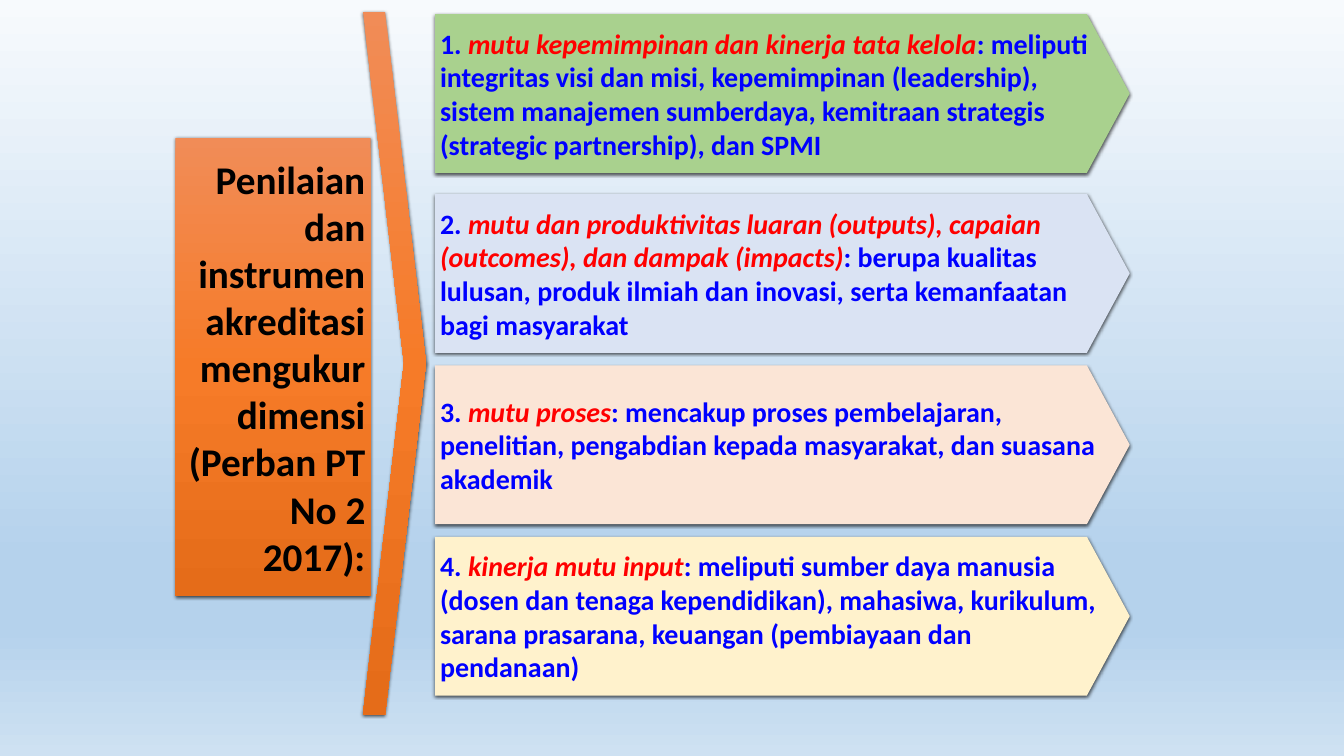
"""Build a slide on the four dimensions that accreditation measures."""
from typing import NamedTuple

from lxml.etree import SubElement
from pptx import Presentation
from pptx.dml.color import RGBColor
from pptx.enum.shapes import MSO_SHAPE as Kind
from pptx.enum.text import MSO_ANCHOR as Anchor, MSO_AUTO_SIZE as Auto, PP_ALIGN as Align
from pptx.oxml.ns import qn
from pptx.util import Pt

PX = 9144
FONT = "Calibri"
BLUE, RED, BLACK = "0000FF", "FF0000", "000000"
SKY = [(0, "F7FAFD"), (74, "B5D2EC"), (83, "B5D2EC"), (100, "CEE1F2")]
FLAME = [(0, "F18C57"), (50, "F67B28"), (100, "E56C19")]


class Box(NamedTuple):
    """A place on the slide in px."""
    x: int
    y: int
    w: int
    h: int


class Point(NamedTuple):
    """One measured dimension with its arrow."""
    top: int
    fill: str
    name: str
    rest: str


POINTS = [
    Point(28, "A9D18E", "mutu kepemimpinan dan kinerja tata kelola",
          "meliputi integritas visi dan misi, kepemimpinan (leadership), sistem manajemen "
          "sumberdaya, kemitraan strategis (strategic partnership), dan SPMI"),
    Point(385, "DAE3F3",
          "mutu dan produktivitas luaran (outputs), capaian (outcomes), dan dampak (impacts)",
          "berupa kualitas lulusan, produk ilmiah dan inovasi, serta kemanfaatan bagi masyarakat"),
    Point(725, "FBE5D6", "mutu proses",
          "mencakup proses pembelajaran, penelitian, pengabdian kepada masyarakat, "
          "dan suasana akademik"),
    Point(1065, "FFF2CC", "kinerja mutu input",
          "meliputi sumber daya manusia (dosen dan tenaga kependidikan), mahasiwa, kurikulum, "
          "sarana prasarana, keuangan (pembiayaan dan pendanaan)"),
]


def tint(code: str) -> RGBColor:
    """Turn a hex string into a colour."""
    return RGBColor.from_string(code)


def blend(fill, root, stops: list) -> None:
    """Give a fill a gradient that runs from top to bottom."""
    fill.gradient()
    fill.gradient_angle = 270
    band = next(root.iter(qn("a:gsLst")))
    band.clear()
    for pos, code in stops:
        stop = SubElement(band, qn("a:gs"), pos=str(pos * 1000))
        SubElement(stop, qn("a:srgbClr"), val=code)


def shade(shape) -> None:
    """Drop the outline and cast a soft shadow downwards."""
    shape.line.fill.background()
    shape.shadow.inherit = False
    effect = next(shape._element.iter(qn("a:effectLst")))
    cast = SubElement(effect, qn("a:outerShdw"), blurRad=str(Pt(4.5)), dist=str(Pt(1.5)),
                      dir="5400000", algn="ctr", rotWithShape="0")
    ink = SubElement(cast, qn("a:srgbClr"), val=BLACK)
    SubElement(ink, qn("a:alpha"), val="63000")


def style(run, size: int, code: str, slant: bool = False) -> None:
    """Format one bold run."""
    font = run.font
    font.name, font.size, font.bold, font.italic = FONT, Pt(size), True, slant
    font.color.rgb = tint(code)


def place(slide, kind: Kind, box: Box, adj: float):
    """Add a shadowed preset shape."""
    shape = slide.shapes.add_shape(kind, *(n * PX for n in box))
    shape.adjustments[0] = adj
    shade(shape)
    return shape


def head(slide, box: Box, text: str) -> None:
    """Turn the title into the orange label."""
    title = slide.shapes.title
    title.left, title.top, title.width, title.height = (n * PX for n in box)
    blend(title.fill, title._element, FLAME)
    shade(title)
    frame = title.text_frame
    frame.text = text
    frame.word_wrap, frame.auto_size = True, Auto.NONE
    frame.vertical_anchor = Anchor.MIDDLE
    para = frame.paragraphs[0]
    para.alignment = Align.RIGHT
    style(para.runs[0], 56, BLACK)


def arrow(slide, num: int, point: Point) -> None:
    """Draw one numbered dimension."""
    shape = place(slide, Kind.PENTAGON, Box(863, point.top, 1378, 315), 0.27)
    shape.fill.solid()
    shape.fill.fore_color.rgb = tint(point.fill)
    frame = shape.text_frame
    frame.word_wrap, frame.vertical_anchor = True, Anchor.MIDDLE
    para = frame.paragraphs[0]
    para.alignment = Align.LEFT
    for text, code in ((f"{num}. ", BLUE), (point.name, RED), (f": {point.rest}", BLUE)):
        run = para.add_run()
        run.text = text
        style(run, 40, code, code == RED)


def main() -> None:
    """Build and save the slide."""
    deck = Presentation()
    deck.slide_width, deck.slide_height = 2666 * PX, 1500 * PX
    slide = deck.slides.add_slide(deck.slide_layouts[5])
    blend(slide.background.fill, slide._element, SKY)
    head(slide, Box(348, 274, 387, 909),
         "Penilaian dan instrumen akreditasi mengukur dimensi (Perban PT No 2 2017):")
    wedge = place(slide, Kind.CHEVRON, Box(720, 23, 125, 1395), 0.65)
    blend(wedge.fill, wedge._element, FLAME)
    for num, point in enumerate(POINTS, 1):
        arrow(slide, num, point)
    deck.save("out.pptx")


if __name__ == "__main__":
    main()
